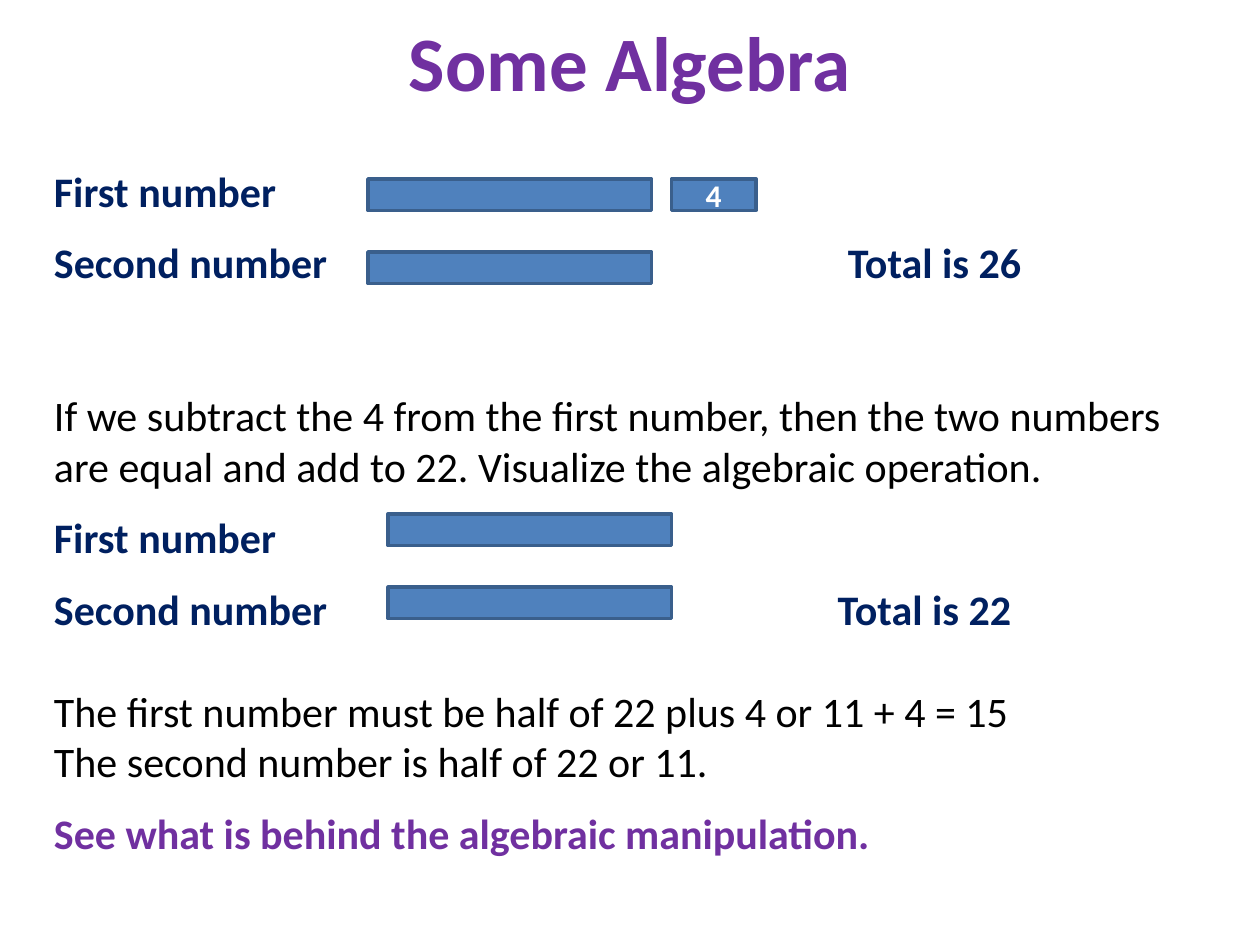
from lxml.etree import SubElement
from pptx import Presentation
from pptx.dml.color import RGBColor
from pptx.enum.shapes import MSO_SHAPE as Shape
from pptx.enum.text import MSO_ANCHOR as Anchor, PP_ALIGN as Align
from pptx.oxml.ns import qn
from pptx.util import Inches, Pt

COLORS = {
    "purple": "7030A0", "navy": "002060", "black": "000000",
    "white": "FFFFFF", "bar": "4F81BD", "bar_line": "3A5F8C",
}
FONT = "Calibri"
SMALL_GAP, LINE_GAP = 12.2, 29.3  # height of an empty 10 pt and 24 pt line

# Text, colour, bold, space before in points, tab stop in inches
BODY = [
    ("First number", "navy", True, 0, None),
    ("Second number\tTotal is 26", "navy", True, SMALL_GAP, 6.3),
    ("If we subtract the 4 from the first number, then the two numbers "
     "are equal and add to 22. Visualize the algebraic operation.",
     "black", False, 2 * LINE_GAP, None),
    ("First number", "navy", True, SMALL_GAP, None),
    ("Second number\tTotal is 22", "navy", True, SMALL_GAP, 6.22),
    ("The first number must be half of 22 plus 4 or 11 + 4 = 15",
     "black", False, LINE_GAP, None),
    ("The second number is half of 22 or 11.", "black", False, 0, None),
    ("See what is behind the algebraic manipulation.",
     "purple", True, SMALL_GAP, None),
]


def rgb(name):
    return RGBColor.from_string(COLORS[name])


def style(paragraph, size, color, bold):
    font = paragraph.font
    font.name, font.size, font.bold = FONT, Pt(size), bold
    font.color.rgb = rgb(color)


def add_tab_stop(paragraph, position):
    properties = paragraph._p.get_or_add_pPr()
    tabs = SubElement(properties, qn("a:tabLst"))
    SubElement(tabs, qn("a:tab"), pos=str(Inches(position)), algn="l")


def add_text_frame(slide, left, top, width, height):
    box = slide.shapes.add_textbox(
        Inches(left), Inches(top), Inches(width), Inches(height))
    box.text_frame.word_wrap = True
    return box.text_frame


def add_title(slide, left, top, width, height):
    frame = add_text_frame(slide, left, top, width, height)
    frame.vertical_anchor = Anchor.MIDDLE
    paragraph = frame.paragraphs[0]
    paragraph.text = "Some Algebra"
    paragraph.alignment = Align.CENTER
    style(paragraph, 44, "purple", True)


def add_body(slide, left, top, width, height):
    frame = add_text_frame(slide, left, top, width, height)
    frame.margin_top = Inches(0.39)
    for index, (text, color, bold, gap, tab) in enumerate(BODY):
        paragraph = frame.add_paragraph() if index else frame.paragraphs[0]
        paragraph.text = text
        paragraph.space_before = Pt(gap)
        style(paragraph, 24, color, bold)
        if tab:
            add_tab_stop(paragraph, tab)


def add_bar(slide, left, top, width, label=None):
    bar = slide.shapes.add_shape(
        Shape.RECTANGLE, Inches(left), Inches(top), Inches(width), Inches(0.25))
    bar.shadow.inherit = False
    bar.fill.solid()
    bar.fill.fore_color.rgb = rgb("bar")
    bar.line.color.rgb = rgb("bar_line")
    bar.line.width = Pt(2)
    if label:
        bar.text_frame.vertical_anchor = Anchor.MIDDLE
        paragraph = bar.text_frame.paragraphs[0]
        paragraph.text = label
        paragraph.alignment = Align.CENTER
        style(paragraph, 18, "white", True)


def add_bar_model(slide, left, top, extra=None):
    """Two equal bars, with an optional extra piece on the first."""
    for row in range(2):
        add_bar(slide, left, top + row * 0.58, 2.25)
    if extra:
        add_bar(slide, left + 2.41, top, 0.67, extra)


def main():
    presentation = Presentation()
    presentation.slide_width = Inches(10)
    presentation.slide_height = Inches(7.5)
    slide = presentation.slides.add_slide(presentation.slide_layouts[6])

    # Text
    add_title(slide, 0.5, 0.05, 9, 0.87)
    add_body(slide, 0.33, 0.92, 9.42, 5.96)

    # Bars before and after subtracting
    add_bar_model(slide, 2.92, 1.42, extra="4")
    add_bar_model(slide, 3.08, 4.08)

    presentation.save("out.pptx")


if __name__ == "__main__":
    main()
